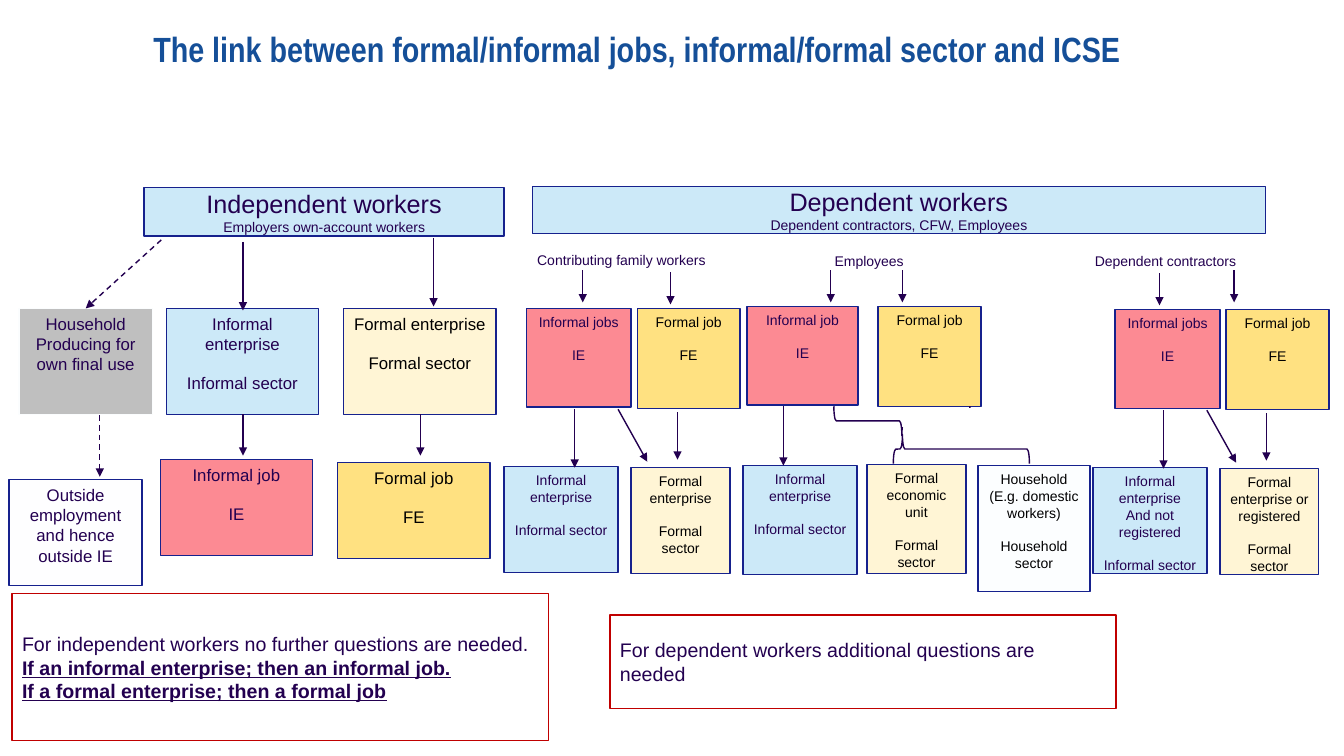
import pptx
import pptx.util
import pptx.dml.color
import pptx.enum.dml
import pptx.enum.shapes
import pptx.enum.text
import pptx.oxml

Inches, Pt = pptx.util.Inches, pptx.util.Pt
ANCHOR, ALIGN = pptx.enum.text.MSO_ANCHOR, pptx.enum.text.PP_ALIGN
SHAPE = pptx.enum.shapes.MSO_SHAPE

INK, BLACK, NAVY, RED = "230050", "000000", "16218D", "C00000"
WHITE, GREY, BLUE, PINK = "FFFFFF", "BFBFBF", "CCE9F8", "FC8A93"
CREAM, GOLD, PALE = "FFF5D5", "FFE181", "FCFEFF"


def rgb(hex_colour):
    return pptx.dml.color.RGBColor.from_string(hex_colour)


def write(tf, lines, size, colour=INK, align=ALIGN.CENTER):
    """One paragraph per line; an empty line becomes space before the next."""
    tf.word_wrap = True
    p, gap = None, False
    for line in lines:
        if not line:
            gap = True
            continue
        p = tf.add_paragraph() if p is not None else tf.paragraphs[0]
        p.text = line
        p.alignment = align
        p.font.size, p.font.name = Pt(size), "Arial"
        p.font.color.rgb = rgb(colour)
        if gap:
            p.space_before = Pt(size * 1.15)
            gap = False


def shape(s, kind, x, y, w, h, fill, line):
    sp = s.shapes.add_shape(kind, Inches(x), Inches(y), Inches(w), Inches(h))
    sp.shadow.inherit = False
    if fill:
        sp.fill.solid()
        sp.fill.fore_color.rgb = rgb(fill)
    else:
        sp.fill.background()
    sp.line.color.rgb = rgb(line)
    sp.line.width = Pt(1)
    return sp


def box(s, x, y, w, h, lines, fill, size=10, colour=INK, line=NAVY,
        anchor=ANCHOR.TOP, align=ALIGN.CENTER):
    sp = shape(s, SHAPE.RECTANGLE, x, y, w, h, fill, line)
    sp.text_frame.vertical_anchor = anchor
    write(sp.text_frame, lines, size, colour, align)
    return sp


def arrow(s, x1, y1, x2, y2, dashed=False):
    c = s.shapes.add_connector(pptx.enum.shapes.MSO_CONNECTOR.STRAIGHT,
                               Inches(x1), Inches(y1), Inches(x2), Inches(y2))
    c.line.color.rgb = rgb(INK)
    c.line.width = Pt(1)
    if dashed:
        c.line.dash_style = pptx.enum.dml.MSO_LINE.DASH
    ns = 'xmlns:a="http://schemas.openxmlformats.org/drawingml/2006/main"'
    c.line._get_or_add_ln().append(pptx.oxml.parse_xml(f'<a:tailEnd {ns} type="triangle"/>'))
    c._element.spPr.append(pptx.oxml.parse_xml(f"<a:effectLst {ns}/>"))


def label(s, x, y, text):
    tb = s.shapes.add_textbox(Inches(x), Inches(y), Inches(1.94), Inches(0.27))
    tb.text_frame.vertical_anchor = ANCHOR.MIDDLE
    write(tb.text_frame, [text], 10, align=ALIGN.LEFT)


def title(s, x, y, w, h):
    sp = s.shapes.title
    sp.left, sp.top, sp.width, sp.height = Inches(x), Inches(y), Inches(w), Inches(h)
    tf = sp.text_frame
    tf.text = "The link between formal/informal jobs, informal/formal sector and ICSE"
    tf.margin_left = tf.margin_right = tf.margin_top = tf.margin_bottom = 0
    tf.vertical_anchor = ANCHOR.TOP
    p = tf.paragraphs[0]
    p.alignment, p.line_spacing = ALIGN.LEFT, 0.9
    font = p.runs[0].font
    font.name, font.size, font.bold = "Arial Narrow", Pt(25), True
    font.color.rgb = rgb("154F98")


def header(s, x, y, w, h, name, members):
    sp = box(s, x, y, w, h, [name, members], BLUE, anchor=ANCHOR.MIDDLE)
    sp.text_frame.paragraphs[0].font.size = Pt(18)


def independent_workers(s, x, y):
    header(s, x + 1.24, y, 3.57, 0.48, "Independent workers", "Employers own-account workers")
    # Enterprises and the jobs that follow from them
    columns = [
        (1.46, "Informal enterprise", "Informal sector", BLUE, "Informal job", "IE", PINK, INK, 2.7),
        (3.22, "Formal enterprise", "Formal sector", CREAM, "Formal job", "FE", GOLD, BLACK, 2.73),
    ]
    for dx, unit, sector, unit_fill, job, code, job_fill, colour, job_dy in columns:
        box(s, x + dx, y + 1.2, 1.51, 1.05, [unit, "", sector], unit_fill, 12, colour)
        box(s, x + dx - 0.06, y + job_dy, 1.51, 0.95, [job, "", code], job_fill, 12, colour)
        arrow(s, x + dx + 0.76, y + 2.25, x + dx + 0.76, y + 2.66)
    arrow(s, x + 2.22, y + 0.54, x + 2.22, y + 1.22)
    arrow(s, x + 4.11, y + 0.5, x + 4.11, y + 1.18)
    # Household production, outside employment
    box(s, x, y + 1.2, 1.32, 1.05, ["Household", "Producing for own final use"],
        GREY, 12, line="FBFDFE")
    box(s, x - 0.1, y + 2.9, 1.32, 1.05, ["Outside employment and hence outside IE"], "FEFEFF", 12)
    arrow(s, x + 1.41, y + 0.52, x + 0.66, y + 1.2, dashed=True)
    arrow(s, x + 0.8, y + 2.26, x + 0.8, y + 2.87, dashed=True)


def job_pair(s, x, y, informal, informal_w, formal_dx):
    box(s, x, y, informal_w, 0.98, [informal, "", "IE"], PINK)
    box(s, x + formal_dx, y, 1.02, 0.99, ["Formal job", "", "FE"], GOLD, colour=BLACK)


def two_way_branch(s, x, y, name, name_dx, drops, informal_unit, formal_unit):
    label(s, x + name_dx, y - 0.62, name)
    for dx, dy in drops:
        arrow(s, x + dx, y + dy, x + dx, y + dy + 0.32)
    job_pair(s, x, y, "Informal jobs", 1.04, 1.1)
    box(s, x - 0.22, y + 1.57, 1.13, 1.05, informal_unit + ["", "Informal sector"], BLUE)
    box(s, x + 1.04, y + 1.58, 0.98, 1.05, [formal_unit, "", "Formal sector"], CREAM, colour=BLACK)
    arrow(s, x + 0.48, y + 1, x + 0.48, y + 1.58)
    arrow(s, x + 0.91, y + 1, x + 1.2, y + 1.52)
    arrow(s, x + 1.5, y + 1.03, x + 1.5, y + 1.5)


def employees_branch(s, x, y):
    label(s, x + 0.77, y - 0.59, "Employees")
    for dx in (0.83, 1.54):
        arrow(s, x + dx, y - 0.36, x + dx, y - 0.04)
    job_pair(s, x, y, "Informal job", 1.1, 1.3)
    box(s, x - 0.04, y + 1.58, 1.13, 1.08, ["Informal enterprise", "", "Informal sector"], BLUE)
    box(s, x + 1.19, y + 1.57, 0.98, 1.08, ["Formal economic unit", "", "Formal sector"],
        CREAM, colour=BLACK)
    box(s, x + 2.29, y + 1.58, 1.11, 1.25,
        ["Household", "(E.g. domestic workers)", "", "Household sector"], PALE, colour=BLACK)
    arrow(s, x + 0.36, y + 0.99, x + 0.36, y + 1.58)
    # Braces from the informal job to the two other units
    upper = shape(s, SHAPE.LEFT_BRACE, x + 1.39, y + 0.46, 0.29, 1.35, None, INK)
    upper.rotation = 270
    lower = shape(s, SHAPE.LEFT_BRACE, x + 1.98, y + 0.74, 0.29, 1.35, None, INK)
    lower.rotation = 90
    lower.adjustments[1] = 0.933
    # White block that leaves only the left arm of the upper brace
    shape(s, SHAPE.RECTANGLE, x + 1.54, y + 1.02, 0.78, 0.17, WHITE, WHITE)


def dependent_workers(s, x, y):
    header(s, x, y, 7.27, 0.47, "Dependent workers", "Dependent contractors, CFW, Employees")
    two_way_branch(s, x - 0.06, y + 1.21, "Contributing family workers", 0.01,
                   [(0.56, -0.38), (1.43, -0.36)], ["Informal enterprise"], "Formal enterprise")
    employees_branch(s, x + 2.13, y + 1.19)
    two_way_branch(s, x + 5.78, y + 1.22, "Dependent contractors", -0.3,
                   [(0.44, -0.36), (1.18, -0.39)],
                   ["Informal enterprise", "And not registered"], "Formal enterprise or registered")


def note(s, x, y, w, h, lines):
    sp = box(s, x, y, w, h, lines, WHITE, 14, line=RED, anchor=ANCHOR.MIDDLE, align=ALIGN.LEFT)
    for p in sp.text_frame.paragraphs[1:]:
        p.font.bold = p.font.underline = True


def main():
    prs = pptx.Presentation()
    prs.slide_width, prs.slide_height = Inches(13.33), Inches(7.5)
    s = prs.slides.add_slide(prs.slide_layouts[5])
    title(s, 1.52, 0.32, 11.48, 0.79)
    independent_workers(s, 0.19, 1.86)
    dependent_workers(s, 5.28, 1.85)
    note(s, 0.12, 5.89, 5.32, 1.46,
         ["For independent workers no further questions are needed.",
          "If an informal enterprise; then an informal job.",
          "If a formal enterprise; then a formal job"])
    note(s, 6.05, 6.1, 5.02, 0.93, ["For dependent workers additional questions are needed"])
    prs.save("out.pptx")


if __name__ == "__main__":
    main()
